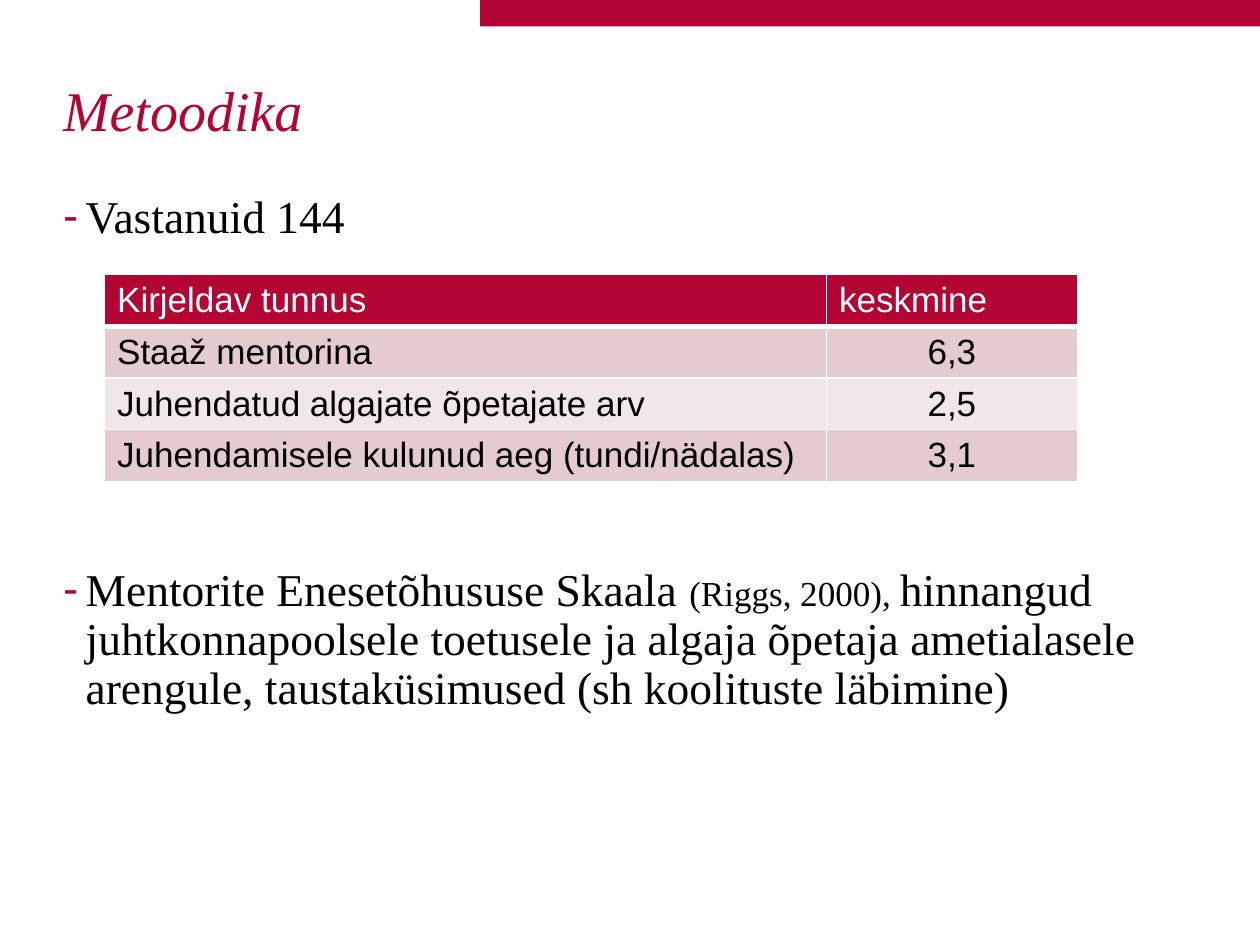
from dataclasses import dataclass

from lxml.etree import SubElement
from pptx import Presentation
from pptx.dml.color import RGBColor
from pptx.enum.shapes import MSO_SHAPE
from pptx.enum.text import MSO_ANCHOR, MSO_AUTO_SIZE, PP_ALIGN
from pptx.oxml.ns import qn
from pptx.util import Inches, Pt

COLORS = {
    "crimson": "B20533",
    "rose": "E4CCCE",
    "blush": "F2E7E8",
    "white": "FFFFFF",
    "black": "000000",
}
SERIF = "Times New Roman"
SANS = "Arial"


@dataclass(frozen=True)
class Span:
    text: str
    size: float = 26


@dataclass(frozen=True)
class Bullet:
    spans: tuple[Span, ...]
    space_before: float = 0


@dataclass(frozen=True)
class Row:
    label: str
    mean: str
    fill: str
    ink: str = "black"
    mean_align: PP_ALIGN = PP_ALIGN.CENTER
    bottom_line: float = 1


BULLETS = (
    Bullet((Span("Vastanuid 144"),)),
    Bullet(
        (
            Span("Mentorite Enesetõhususe Skaala "),
            Span("(Riggs, 2000), ", 20),
            Span(
                "hinnangud juhtkonnapoolsele toetusele ja algaja õpetaja "
                "ametialasele arengule, taustaküsimused (sh koolituste läbimine)"
            ),
        ),
        space_before=185,
    ),
)
ROWS = (
    Row("Kirjeldav tunnus", "keskmine", "crimson", "white", PP_ALIGN.LEFT, 3),
    Row("Staaž mentorina", "6,3", "rose"),
    Row("Juhendatud algajate õpetajate arv", "2,5", "blush"),
    Row("Juhendamisele kulunud aeg (tundi/nädalas)", "3,1", "rose"),
)


def rgb(name: str) -> RGBColor:
    return RGBColor.from_string(COLORS[name])


def add_text(paragraph, text: str, *, size: float, font: str = SERIF,
             color: str = "black", italic: bool = False) -> None:
    run = paragraph.add_run()
    run.text = text
    run.font.size = Pt(size)
    run.font.name = font
    run.font.italic = italic
    run.font.bold = False
    run.font.color.rgb = rgb(color)


def place(holder, left: float, top: float, width: float, height: float,
          anchor: MSO_ANCHOR):
    holder.left, holder.top = Inches(left), Inches(top)
    holder.width, holder.height = Inches(width), Inches(height)
    frame = holder.text_frame
    frame.margin_left = frame.margin_right = 0
    frame.margin_top = frame.margin_bottom = 0
    frame.word_wrap = True
    frame.auto_size = MSO_AUTO_SIZE.NONE
    frame.vertical_anchor = anchor
    return frame


def add_bullet(paragraph, bullet: Bullet) -> None:
    paragraph.alignment = PP_ALIGN.LEFT
    paragraph.line_spacing = 0.9
    paragraph.space_before = Pt(bullet.space_before)
    properties = paragraph._p.get_or_add_pPr()
    properties.set("marL", str(Inches(0.18)))
    properties.set("indent", str(-Inches(0.18)))
    tint = SubElement(properties, qn("a:buClr"))
    SubElement(tint, qn("a:srgbClr"), val=COLORS["crimson"])
    SubElement(properties, qn("a:buFont"), typeface=SANS)
    SubElement(properties, qn("a:buChar"), char="-")
    for span in bullet.spans:
        add_text(paragraph, span.text, size=span.size)


def add_borders(cell, top: float, bottom: float) -> None:
    properties = cell._tc.get_or_add_tcPr()
    for side, width in (("L", 1), ("R", 1), ("T", top), ("B", bottom)):
        line = SubElement(properties, qn(f"a:ln{side}"), w=str(Pt(width)))
        paint = SubElement(line, qn("a:solidFill"))
        SubElement(paint, qn("a:srgbClr"), val=COLORS["white"])


def add_means_table(slide) -> None:
    means = slide.shapes.add_table(
        len(ROWS), 2, Inches(0.83), Inches(2.18), Inches(7.72), Inches(1.64)
    ).table
    for column, width in zip(means.columns, (5.73, 1.99)):
        column.width = Inches(width)
    line_above = 1
    for index, row in enumerate(ROWS):
        means.rows[index].height = Inches(0.41)
        entries = ((row.label, PP_ALIGN.LEFT), (row.mean, row.mean_align))
        for column, (text, align) in enumerate(entries):
            cell = means.cell(index, column)
            add_borders(cell, line_above, row.bottom_line)
            cell.fill.solid()
            cell.fill.fore_color.rgb = rgb(row.fill)
            paragraph = cell.text_frame.paragraphs[0]
            paragraph.alignment = align
            add_text(paragraph, text, size=20, font=SANS, color=row.ink)
        line_above = row.bottom_line


def main() -> None:
    """Build the methodology slide and save it."""
    deck = Presentation()
    deck.slide_width, deck.slide_height = Inches(10), Inches(7.5)
    slide = deck.slides.add_slide(deck.slide_layouts[1])

    banner = slide.shapes.add_shape(
        MSO_SHAPE.RECTANGLE, Inches(3.81), 0, Inches(6.19), Inches(0.21)
    )
    banner.shadow.inherit = False
    banner.fill.solid()
    banner.fill.fore_color.rgb = rgb("crimson")
    banner.line.fill.background()

    heading = place(slide.shapes.title, 0.5, 0.3, 8.99, 1.24,
                    MSO_ANCHOR.MIDDLE).paragraphs[0]
    heading.alignment = PP_ALIGN.LEFT
    heading.line_spacing = 0.75
    add_text(heading, "Metoodika", size=32, color="crimson", italic=True)

    method = place(slide.placeholders[1], 0.5, 1.54, 8.99, 4.57, MSO_ANCHOR.TOP)
    for index, bullet in enumerate(BULLETS):
        paragraph = method.add_paragraph() if index else method.paragraphs[0]
        add_bullet(paragraph, bullet)

    add_means_table(slide)
    deck.save("out.pptx")


if __name__ == "__main__":
    main()
